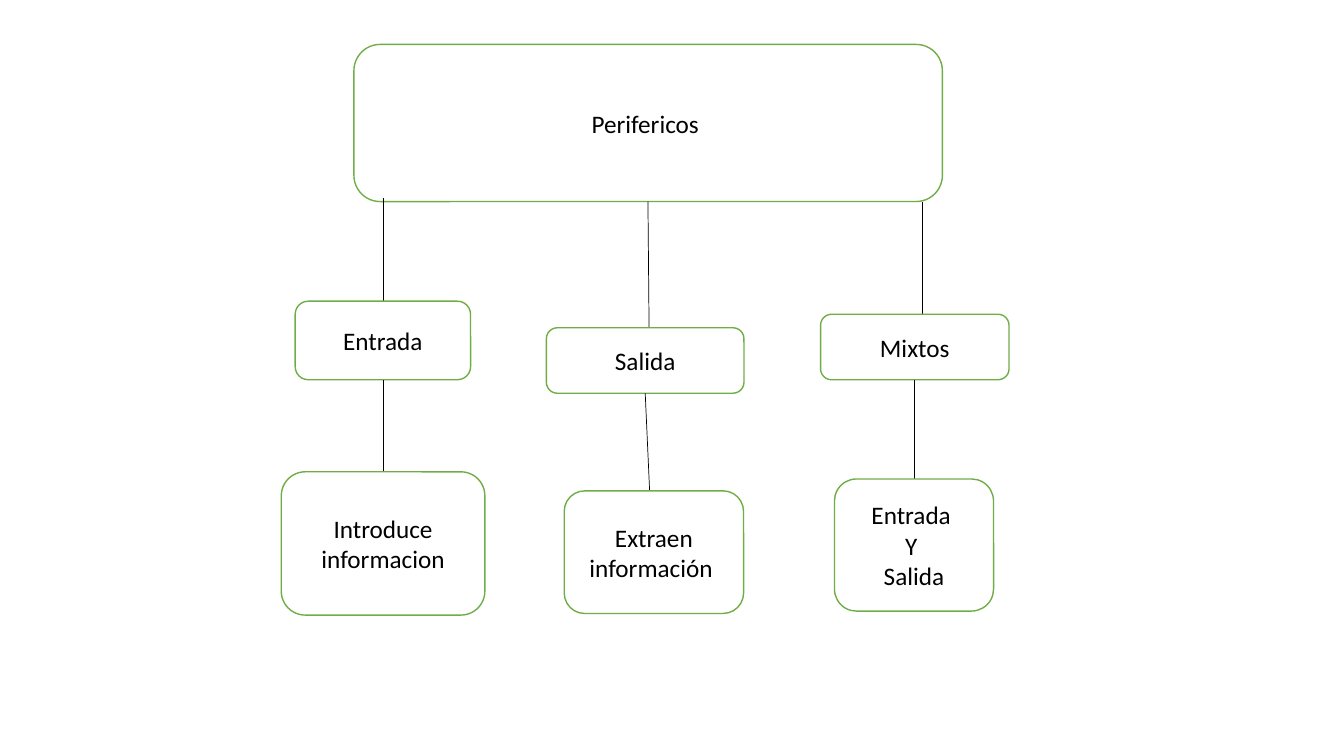
"""Build a one-slide tree of peripheral types: input, output and mixed."""
import dataclasses

import pptx
import pptx.dml.color
import pptx.enum.shapes
import pptx.enum.text
import pptx.oxml.ns
import pptx.util
from lxml import etree
from pptx.util import Cm


@dataclasses.dataclass(frozen=True)
class Theme:
    paper: pptx.dml.color.RGBColor = pptx.dml.color.RGBColor.from_string("FFFFFF")
    border: pptx.dml.color.RGBColor = pptx.dml.color.RGBColor.from_string("70AD47")
    ink: pptx.dml.color.RGBColor = pptx.dml.color.RGBColor.from_string("000000")
    font: str = "Calibri"
    size: pptx.util.Length = pptx.util.Pt(18)
    box_line: pptx.util.Length = pptx.util.Pt(1)
    link_line: pptx.util.Length = pptx.util.Pt(0.5)


theme = Theme()


def add_node(text, *, area, size=theme.size, color=theme.ink, font=theme.font):
    box = page.shapes.add_shape(
        pptx.enum.shapes.MSO_SHAPE.ROUNDED_RECTANGLE, *map(Cm, area))
    box.shadow.inherit = False
    box.fill.solid()
    box.fill.fore_color.rgb = theme.paper
    box.line.color.rgb = theme.border
    box.line.width = theme.box_line
    frame = box.text_frame
    frame.word_wrap = True
    frame.vertical_anchor = pptx.enum.text.MSO_ANCHOR.MIDDLE
    frame.text = text
    for para in frame.paragraphs:
        para.alignment = pptx.enum.text.PP_ALIGN.CENTER
        for span in para.runs:
            span.font.name = font
            span.font.size = size
            span.font.color.rgb = color


def add_link(ends):
    link = page.shapes.add_connector(
        pptx.enum.shapes.MSO_CONNECTOR.STRAIGHT, *map(Cm, ends))
    link.line.color.rgb = theme.ink
    link.line.width = theme.link_line
    properties = link._element.spPr
    etree.SubElement(properties, pptx.oxml.ns.qn("a:effectLst"))


deck = pptx.Presentation()
deck.slide_width = Cm(33.87)
deck.slide_height = Cm(19.05)
page = deck.slides.add_slide(deck.slide_layouts[6])

add_node("Perifericos ", area=(8.92, 1.12, 14.83, 3.96))

branches = [
    [((16.33, 5.08, 16.36, 8.56), "Salida", (13.87, 8.33, 5.02, 1.67)),
     ((16.38, 12.57, 16.26, 9.91), "Extraen información ", (14.22, 12.37, 4.52, 3.09))],
    [((23.24, 5.08, 23.24, 8.15), "Mixtos", (20.68, 7.92, 4.75, 1.65)),
     ((23.04, 9.58, 23.04, 12.09), "Entrada \nY \nSalida", (21.03, 12.07, 4.01, 3.33))],
    [((9.65, 4.98, 9.65, 7.95), "Entrada", (7.44, 7.59, 4.42, 1.98)),
     ((9.65, 9.58, 9.65, 11.89), "Introduce\ninformacion", (7.09, 11.89, 5.13, 3.61))],
]
branches[0][0] = (branches[0][0][0], "Salida", (13.77, 8.26, 4.98, 1.65))

for branch in branches:
    for ends, text, area in branch:
        add_link(ends)
        add_node(text, area=area)

deck.save("out.pptx")
